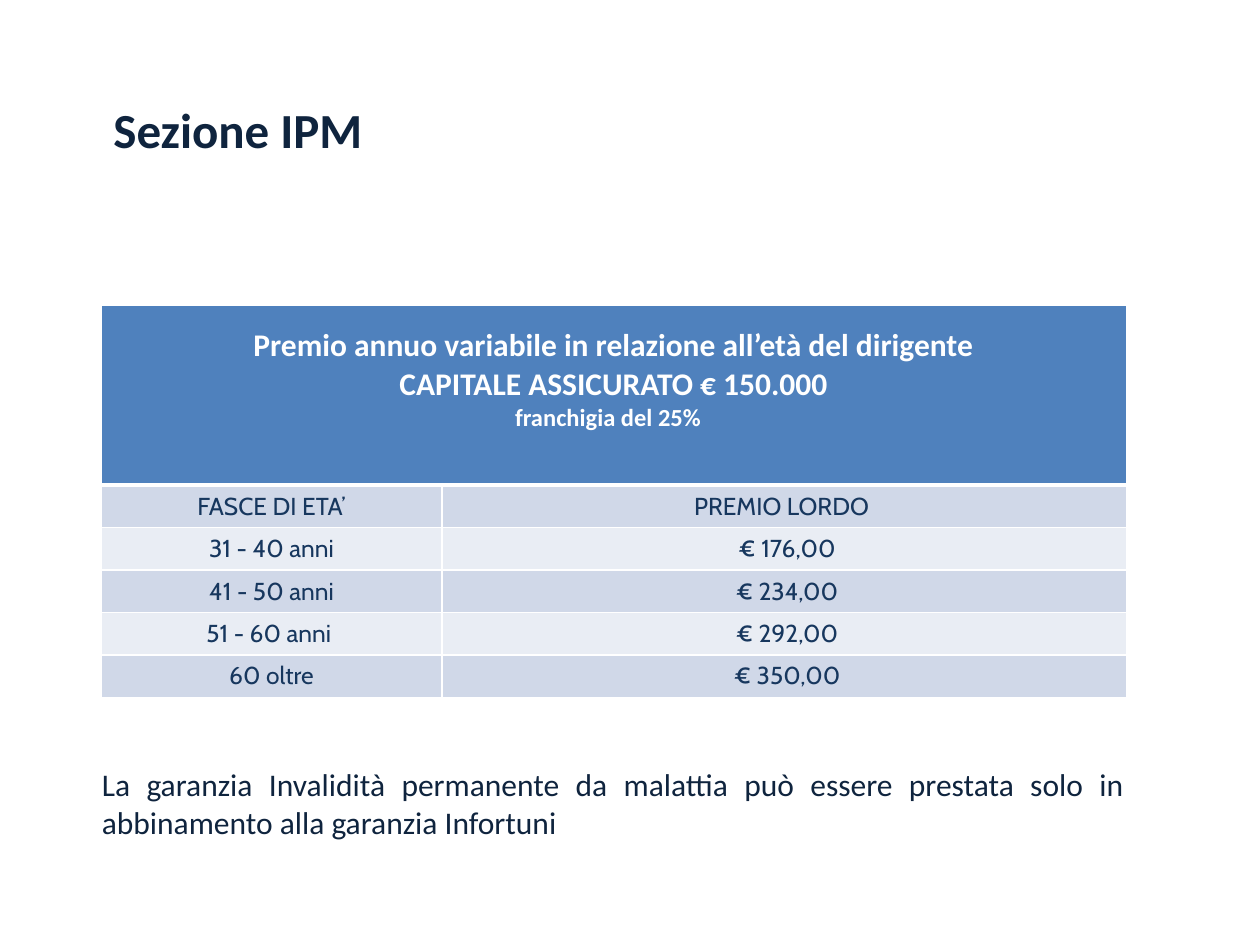
from dataclasses import dataclass

import lxml.etree
import pptx
import pptx.dml.color
import pptx.enum.text
import pptx.oxml.ns
import pptx.util
from pptx.util import Inches

NAVY = pptx.dml.color.RGBColor(0x0F, 0x24, 0x3E)
BLUE_TEXT = pptx.dml.color.RGBColor(0x17, 0x37, 0x5E)
WHITE = pptx.dml.color.RGBColor(0xFF, 0xFF, 0xFF)
HEADER_BLUE = pptx.dml.color.RGBColor(0x4F, 0x81, 0xBD)
DARK_BAND = pptx.dml.color.RGBColor(0xD0, 0xD8, 0xE8)
LIGHT_BAND = pptx.dml.color.RGBColor(0xE9, 0xED, 0xF4)

ALIGN = pptx.enum.text.PP_ALIGN
ANCHOR = pptx.enum.text.MSO_ANCHOR


@dataclass(frozen=True)
class Style:
    font: str
    size: int
    color: pptx.dml.color.RGBColor
    bold: bool = False
    align: ALIGN = ALIGN.CENTER


@dataclass(frozen=True)
class Premium:
    age_band: str
    amount: str


TITLE = Style("Calibri", 28, NAVY, True, ALIGN.JUSTIFY)
NOTE = Style("Calibri", 18, NAVY, False, ALIGN.JUSTIFY)
HEADING = Style("Calibri", 18, WHITE, True)
SUBHEADING = Style("Calibri", 14, WHITE, True)
BODY = Style("Cabin", 14, BLUE_TEXT)

HEADER_LINES = [
    ("Premio annuo variabile in relazione all’età del dirigente", HEADING),
    ("CAPITALE ASSICURATO € 150.000", HEADING),
    ("franchigia del 25%  ", SUBHEADING),
]
PREMIUMS = [
    Premium("FASCE DI ETA’", "PREMIO LORDO "),
    Premium("31 - 40 anni", " € 176,00"),
    Premium("41 - 50 anni", " € 234,00"),
    Premium("51 - 60 anni ", " € 292,00"),
    Premium("60 oltre", " € 350,00"),
]


def write_lines(frame, lines: list[tuple[str, Style]]) -> None:
    frame.word_wrap = True
    for index, (text, style) in enumerate(lines):
        para = frame.add_paragraph() if index else frame.paragraphs[0]
        para.text = text
        para.alignment = style.align
        para.font.name = style.font
        para.font.size = pptx.util.Pt(style.size)
        para.font.bold = style.bold
        para.font.color.rgb = style.color


def set_borders(cell, bottom: int = 1, top: int = 1) -> None:
    properties = cell._tc.get_or_add_tcPr()
    widths = {"a:lnL": 1, "a:lnR": 1, "a:lnT": top, "a:lnB": bottom}
    for position, (tag, points) in enumerate(widths.items()):
        line = lxml.etree.Element(pptx.oxml.ns.qn(tag), w=str(pptx.util.Pt(points)))
        fill = lxml.etree.SubElement(line, pptx.oxml.ns.qn("a:solidFill"))
        lxml.etree.SubElement(fill, pptx.oxml.ns.qn("a:srgbClr"), val=str(WHITE))
        properties.insert(position, line)


def fill_cell(cell, color: pptx.dml.color.RGBColor, lines: list[tuple[str, Style]]) -> None:
    cell.fill.solid()
    cell.fill.fore_color.rgb = color
    write_lines(cell.text_frame, lines)


def add_premium_table(page) -> None:
    frame = page.shapes.add_table(
        len(PREMIUMS) + 1, 2, Inches(0.8), Inches(2.42), Inches(8.14), Inches(3.09)
    )
    table = frame.table
    table.columns[0].width = Inches(2.71)
    table.columns[1].width = Inches(5.43)
    for row in table.rows:
        row.height = Inches(0.33)
    table.rows[0].height = Inches(1.43)

    header = table.cell(0, 0)
    header.merge(table.cell(0, 1))
    header.vertical_anchor = ANCHOR.MIDDLE
    header.margin_bottom = Inches(0.29)
    fill_cell(header, HEADER_BLUE, HEADER_LINES)
    for column in range(2):
        set_borders(table.cell(0, column), bottom=3)

    for row, premium in enumerate(PREMIUMS, start=1):
        color = DARK_BAND if row % 2 else LIGHT_BAND
        for column, text in enumerate((premium.age_band, premium.amount)):
            cell = table.cell(row, column)
            fill_cell(cell, color, [(text, BODY)])
            set_borders(cell, top=3 if row == 1 else 1)


def main() -> None:
    deck = pptx.Presentation()
    deck.slide_width, deck.slide_height = Inches(10), Inches(7.5)
    page = deck.slides.add_slide(deck.slide_layouts[5])

    title = page.shapes.title
    title.left, title.top = Inches(0.8), Inches(0.74)
    title.width, title.height = Inches(5.36), Inches(0.57)
    title.text_frame.vertical_anchor = ANCHOR.TOP
    write_lines(title.text_frame, [("Sezione IPM", TITLE)])

    add_premium_table(page)

    note = page.shapes.add_textbox(Inches(0.71), Inches(6.02), Inches(8.31), Inches(0.71))
    text = (
        "La garanzia Invalidità permanente da malattia può essere prestata solo in "
        "abbinamento alla garanzia Infortuni"
    )
    write_lines(note.text_frame, [(text, NOTE)])

    deck.save("out.pptx")


if __name__ == "__main__":
    main()
